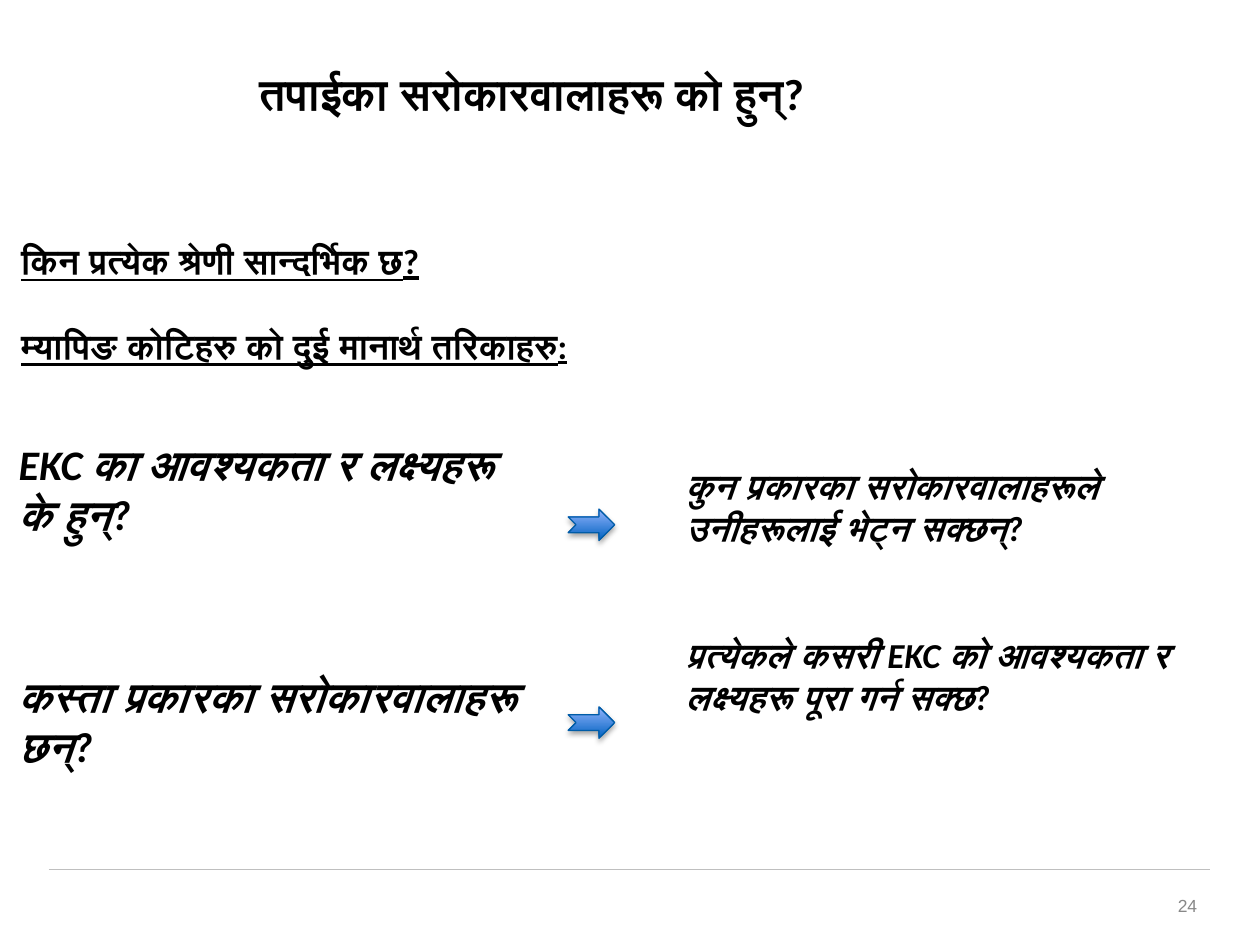
import pptx
import pptx.util
import pptx.dml.color
import pptx.enum.shapes
import pptx.enum.text
import pptx.oxml
import pptx.oxml.ns
import lxml.etree

Pt = pptx.util.Pt
qn = pptx.oxml.ns.qn
Align = pptx.enum.text.PP_ALIGN
Anchor = pptx.enum.text.MSO_ANCHOR


def tint(code):
    return pptx.dml.color.RGBColor.from_string(code)


deck = pptx.Presentation()
deck.slide_width, deck.slide_height = Pt(720), Pt(540)
slide = deck.slides.add_slide(deck.slide_layouts[6])
shapes = slide.shapes

rule = shapes.add_connector(
    pptx.enum.shapes.MSO_CONNECTOR.STRAIGHT, Pt(28), Pt(496.8), Pt(691.2), Pt(496.8)
)
rule.line.color.rgb = tint("BFBFBF")
rule.line.width = Pt(0.75)
lxml.etree.SubElement(rule._element.spPr, qn("a:effectLst"))

bold = {"name": "Calibri", "bold": True}
title = {**bold, "size": Pt(25)}
head = {**bold, "size": Pt(20), "underline": True}
ask = {**bold, "size": Pt(24), "italic": True}
reply = {**bold, "size": Pt(20), "italic": True}
page = {"name": "Arial", "size": Pt(10)}

texts = [
    ((523.4, 503.3, 167.8, 28.8), page, "888888", Align.RIGHT, Anchor.MIDDLE, 0,
     ["24"]),
    ((5, 133.2, 576.7, 128.9), head, "000000", Align.LEFT, Anchor.TOP, 24.4,
     ["किन प्रत्येक श्रेणी सान्दर्भिक छ?",
      "म्यापिङ कोटिहरु को दुई मानार्थ तरिकाहरु:"]),
    ((3.6, 247, 306.7, 188.6), ask, "000000", Align.LEFT, Anchor.TOP, 75,
     ["EKC का आवश्यकता र लक्ष्यहरू के हुन्?",
      "कस्ता प्रकारका सरोकारवालाहरू छन्?"]),
    ((384.5, 262.1, 295.2, 188.6), reply, "000000", Align.LEFT, Anchor.TOP, 48.4,
     ["कुन प्रकारका सरोकारवालाहरूले उनीहरूलाई भेट्न सक्छन्?",
      "प्रत्येकले कसरी EKC को आवश्यकता र लक्ष्यहरू पूरा गर्न सक्छ?"]),
    ((141.1, 34.6, 397.4, 43.9), title, "000000", Align.LEFT, Anchor.TOP, 0,
     ["तपाईका सरोकारवालाहरू को हुन्?"]),
]

for area, style, hue, align, anchor, gap, lines in texts:
    frame = shapes.add_textbox(*map(Pt, area)).text_frame
    frame.word_wrap = True
    frame.vertical_anchor = anchor
    frame.text = "\n".join(lines)
    for i, para in enumerate(frame.paragraphs):
        para.alignment = align
        if i:
            para.space_before = Pt(gap)
        font = para.runs[0].font
        font.color.rgb = tint(hue)
        for key, value in style.items():
            setattr(font, key, value)

for top in (290.9, 403.9):
    arrow = shapes.add_shape(
        pptx.enum.shapes.MSO_SHAPE.NOTCHED_RIGHT_ARROW,
        Pt(324.7), Pt(top), Pt(26.6), Pt(18),
    )
    arrow.fill.gradient()
    arrow.fill.gradient_angle = 90
    for stop, hue, place in zip(arrow.fill.gradient_stops, ("0062C0", "94B4FD"), (0, 1)):
        stop.color.rgb = tint(hue)
        stop.position = place
    arrow.line.color.rgb = tint("005CA7")
    arrow.line.width = Pt(0.75)
    arrow.shadow.inherit = False
    glow = lxml.etree.SubElement(
        arrow._element.spPr.find(qn("a:effectLst")), qn("a:outerShdw"),
        blurRad=str(Pt(3.1)), dist=str(Pt(1.8)), dir="5400000", rotWithShape="0",
    )
    shade = lxml.etree.SubElement(glow, qn("a:srgbClr"), val="000000")
    lxml.etree.SubElement(shade, qn("a:alpha"), val="35000")

deck.save("out.pptx")
